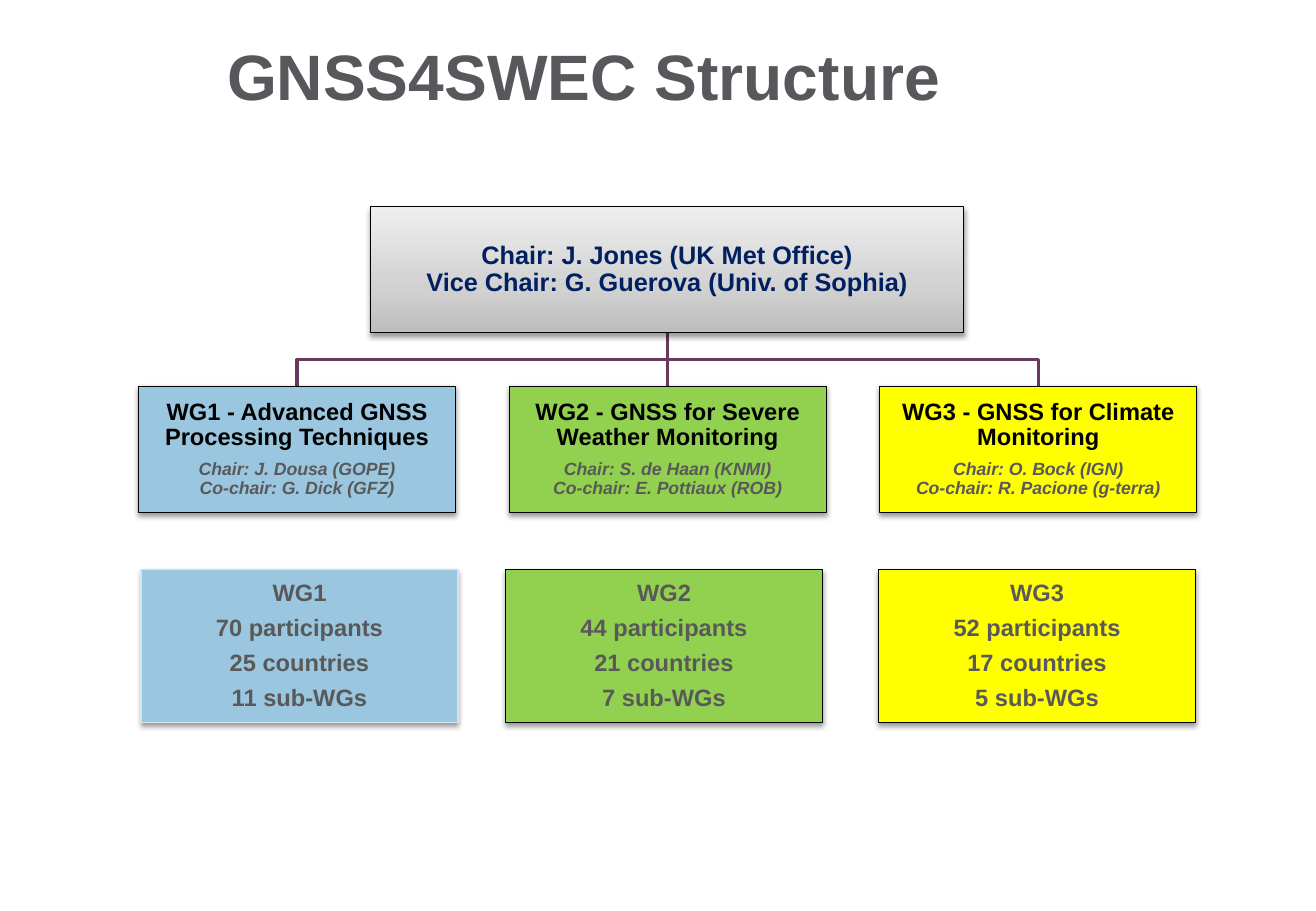
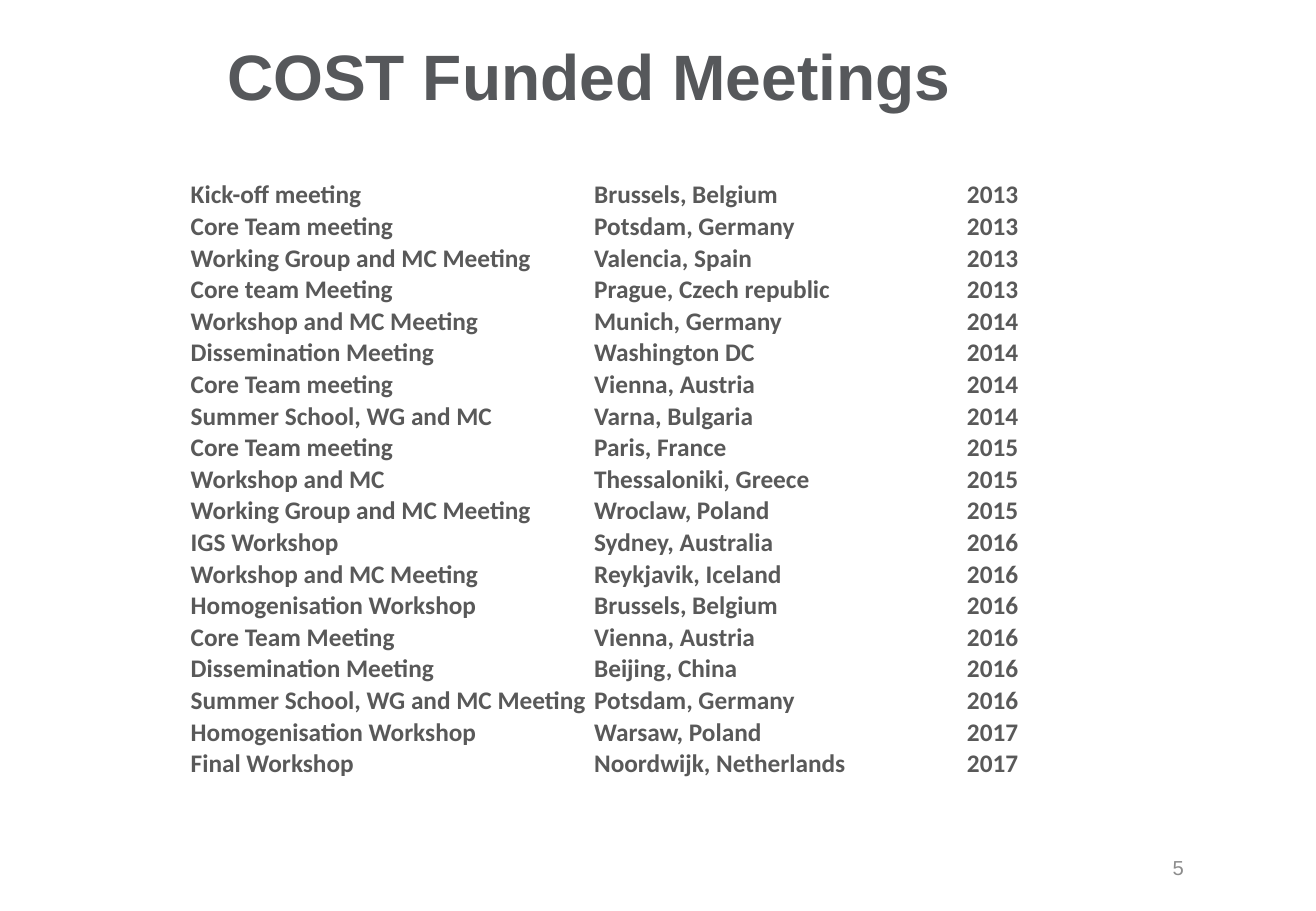
from copy import deepcopy

from lxml import etree
from pptx import Presentation
from pptx.dml.color import RGBColor
from pptx.enum.shapes import MSO_CONNECTOR as CONN, MSO_SHAPE as SHAPE
from pptx.enum.text import MSO_ANCHOR as ANCHOR, PP_ALIGN as ALIGN
from pptx.oxml import parse_xml
from pptx.oxml.ns import nsdecls, qn
from pptx.util import Inches, Pt

BLACK = RGBColor(0x00, 0x00, 0x00)
TITLE_GREY = RGBColor(0x56, 0x58, 0x5B)
TEXT_GREY = RGBColor(0x59, 0x59, 0x59)
PAGE_GREY = RGBColor(0x8C, 0x8C, 0x8C)
NAVY = RGBColor(0x00, 0x20, 0x60)
PLUM = RGBColor(0x69, 0x39, 0x5D)
BLUE = RGBColor(0x9A, 0xC6, 0xE0)
PALE_BLUE = RGBColor(0xD8, 0xE4, 0xED)
GREEN = RGBColor(0x92, 0xD0, 0x50)
YELLOW = RGBColor(0xFF, 0xFF, 0x00)
SILVER = [
    (0, RGBColor(0xBD, 0xBD, 0xBD)),
    (0.35, RGBColor(0xD1, 0xD1, 0xD1)),
    (1, RGBColor(0xEE, 0xEE, 0xEE)),
]
SHADOW = (
    f'<a:outerShdw {nsdecls("a")} blurRad="40000" dist="20000" dir="5400000" '
    'rotWithShape="0"><a:srgbClr val="000000"><a:alpha val="38000"/>'
    '</a:srgbClr></a:outerShdw>'
)

BOX_W, BOX_H = 2.61, 1.04
CHAIR_X, CHAIR_Y, CHAIR_W = 3.05, 1.7, 4.88
GROUP_X, GROUP_Y, GROUP_STEP = 1.14, 3.18, 3.05
COUNT_Y, COUNT_H = 4.69, 1.26

GROUPS = [
    ("WG1", "Advanced GNSS Processing Techniques",
     "Chair: J. Dousa (GOPE)\nCo-chair: G. Dick (GFZ)",
     (70, 25, 11), BLUE, PALE_BLUE, 1.16),
    ("WG2", "GNSS for Severe Weather Monitoring",
     "Chair: S. de Haan (KNMI)\nCo-chair: E. Pottiaux (ROB)",
     (44, 21, 7), GREEN, BLACK, 4.16),
    ("WG3", "GNSS for Climate Monitoring",
     "Chair: O. Bock (IGN)\nCo-chair: R. Pacione (g-terra)",
     (52, 17, 5), YELLOW, BLACK, 7.23),
]

MEETINGS = [
    ("Kick-off meeting", "Brussels, Belgium", "2013"),
    ("Core Team meeting", "Potsdam, Germany", "2013"),
    ("Working Group and MC Meeting", "Valencia, Spain", "2013"),
    ("Core team Meeting", "Prague, Czech republic", "2013"),
    ("Workshop and MC Meeting", "Munich, Germany", "2014"),
    ("Dissemination Meeting", "Washington DC", "2014"),
    ("Core Team meeting", "Vienna, Austria", "2014"),
    ("Summer School, WG and MC", "Varna, Bulgaria", "2014"),
    ("Core Team meeting", "Paris, France", "2015"),
    ("Workshop and MC", "Thessaloniki, Greece", "2015"),
    ("Working Group and MC Meeting", "Wroclaw, Poland", "2015"),
    ("IGS Workshop", "Sydney, Australia", "2016"),
    ("Workshop and MC Meeting", "Reykjavik, Iceland", "2016"),
    ("Homogenisation Workshop", "Brussels, Belgium", "2016"),
    ("Core Team Meeting", "Vienna, Austria", "2016"),
    ("Dissemination Meeting", "Beijing, China", "2016"),
    ("Summer School, WG and MC Meeting", "Potsdam, Germany", "2016"),
    ("Homogenisation Workshop", "Warsaw, Poland", "2017"),
    ("Final Workshop", "Noordwijk, Netherlands", "2017"),
]


class Deck:
    def __init__(self):
        self.prs = Presentation()
        self.prs.slide_width = Inches(10.83)
        self.prs.slide_height = Inches(7.5)
        self.slide = None

    def add_slide(self, title):
        self.slide = self.prs.slides.add_slide(self.prs.slide_layouts[6])
        self.label(title, 1.77, 0.25, 8.37, 0.93, 38, TITLE_GREY, bold=True)

    def add_text(self, p, text, size, color, bold=True, italic=False,
                 font="Arial", align=ALIGN.LEFT):
        p.alignment = align
        for i, line in enumerate(text.split("\n")):
            if i:
                p.add_line_break()
            r = p.add_run()
            r.text = line
            r.font.name = font
            r.font.size = Pt(size)
            r.font.bold = bold
            r.font.italic = italic
            r.font.color.rgb = color

    def label(self, text, x, y, w, h, size, color, bold=False,
              align=ALIGN.LEFT, anchor=ANCHOR.TOP):
        sp = self.slide.shapes.add_textbox(
            Inches(x), Inches(y), Inches(w), Inches(h))
        tf = sp.text_frame
        tf.word_wrap = True
        tf.vertical_anchor = anchor
        self.add_text(tf.paragraphs[0], text, size, color, bold, align=align)

    def gradient(self, sp, stops):
        sp.fill.gradient()
        sp.fill.gradient_angle = 90
        first = sp._element.spPr.find(".//" + qn("a:gs"))
        first.addnext(deepcopy(first))
        for stop, (position, color) in zip(sp.fill.gradient_stops, stops):
            stop.position = position
            stop.color.rgb = color

    def box(self, x, y, w, h, fill, lines, outline=BLACK):
        sp = self.slide.shapes.add_shape(
            SHAPE.RECTANGLE, Inches(x), Inches(y), Inches(w), Inches(h))
        if isinstance(fill, list):
            self.gradient(sp, fill)
        else:
            sp.fill.solid()
            sp.fill.fore_color.rgb = fill
        sp.line.color.rgb = outline
        sp.line.width = Pt(0.75)
        sp.shadow.inherit = False
        effects = sp._element.spPr.find(qn("a:effectLst"))
        effects.append(parse_xml(SHADOW))
        tf = sp.text_frame
        tf.word_wrap = True
        tf.vertical_anchor = ANCHOR.MIDDLE
        tf.margin_left = tf.margin_right = Inches(0.01)
        tf.margin_top = tf.margin_bottom = Inches(0.01)
        for i, (text, size, color, italic) in enumerate(lines):
            p = tf.add_paragraph() if i else tf.paragraphs[0]
            p.line_spacing = 0.9
            if i:
                p.space_before = Pt(5.6)
            self.add_text(p, text, size, color, italic=italic,
                          align=ALIGN.CENTER)

    def style_line(self, sp):
        sp.line.color.rgb = PLUM
        sp.line.width = Pt(2)

    def straight(self, x, top, bottom):
        sp = self.slide.shapes.add_connector(
            CONN.STRAIGHT, Inches(x), Inches(top), Inches(x), Inches(bottom))
        self.style_line(sp)
        etree.SubElement(sp._element.spPr, qn("a:effectLst"))

    def elbow(self, x1, y1, x2, y2):
        middle = (y1 + y2) / 2
        builder = self.slide.shapes.build_freeform(
            Inches(x1), Inches(y1), scale=1.0)
        builder.add_line_segments(
            [(Inches(x), Inches(y))
             for x, y in ((x1, middle), (x2, middle), (x2, y2))], close=False)
        sp = builder.convert_to_shape()
        sp.fill.background()
        self.style_line(sp)
        sp.shadow.inherit = False

    def table(self, x, y, widths, row_h, rows):
        frame = self.slide.shapes.add_table(
            len(rows), len(widths), Inches(x), Inches(y),
            Inches(sum(widths)), Inches(row_h * len(rows)))
        table = frame.table
        table.first_row = table.horz_banding = False
        for column, width in zip(table.columns, widths):
            column.width = Inches(width)
        for i, row in enumerate(rows):
            table.rows[i].height = Inches(row_h)
            for j, text in enumerate(row):
                cell = table.cell(i, j)
                cell.fill.background()
                cell.vertical_anchor = ANCHOR.BOTTOM
                cell.margin_left = cell.margin_right = Inches(0.01)
                cell.margin_top, cell.margin_bottom = Inches(0.01), 0
                align = ALIGN.RIGHT if j == len(row) - 1 else ALIGN.LEFT
                self.add_text(cell.text_frame.paragraphs[0], text, 15,
                              TEXT_GREY, font="Calibri", align=align)


def structure_slide(deck):
    deck.add_slide("GNSS4SWEC Structure")
    chair_bottom = CHAIR_Y + BOX_H
    left, center, right = (
        GROUP_X + i * GROUP_STEP + BOX_W / 2 for i in range(3))
    deck.elbow(center, chair_bottom, right, GROUP_Y)
    deck.straight(center, chair_bottom, GROUP_Y)
    deck.elbow(center, chair_bottom, left, GROUP_Y)
    chairs = ("Chair: J. Jones (UK Met Office)\n"
              "Vice Chair: G. Guerova (Univ. of Sophia)")
    deck.box(CHAIR_X, CHAIR_Y, CHAIR_W, BOX_H, SILVER,
             [(chairs, 15, NAVY, False)])
    for i, (code, topic, leads, counts, fill, outline, x) in enumerate(GROUPS):
        deck.box(GROUP_X + i * GROUP_STEP, GROUP_Y, BOX_W, BOX_H, fill,
                 [(f"{code} - {topic}", 14, BLACK, False),
                  (leads, 10.5, TEXT_GREY, True)])
        units = ("participants", "countries", "sub-WGs")
        facts = [code] + [f"{n} {unit}" for n, unit in zip(counts, units)]
        deck.box(x, COUNT_Y, BOX_W, COUNT_H, fill,
                 [(fact, 14, TEXT_GREY, False) for fact in facts], outline)


def meetings_slide(deck):
    deck.add_slide("COST Funded Meetings")
    deck.table(1.56, 1.47, (3.32, 2.13, 1.38), 0.26, MEETINGS)
    deck.label("5", 9.16, 6.94, 0.68, 0.4, 12, PAGE_GREY,
               align=ALIGN.RIGHT, anchor=ANCHOR.MIDDLE)


def main():
    deck = Deck()
    structure_slide(deck)
    meetings_slide(deck)
    deck.prs.save("out.pptx")


if __name__ == "__main__":
    main()
